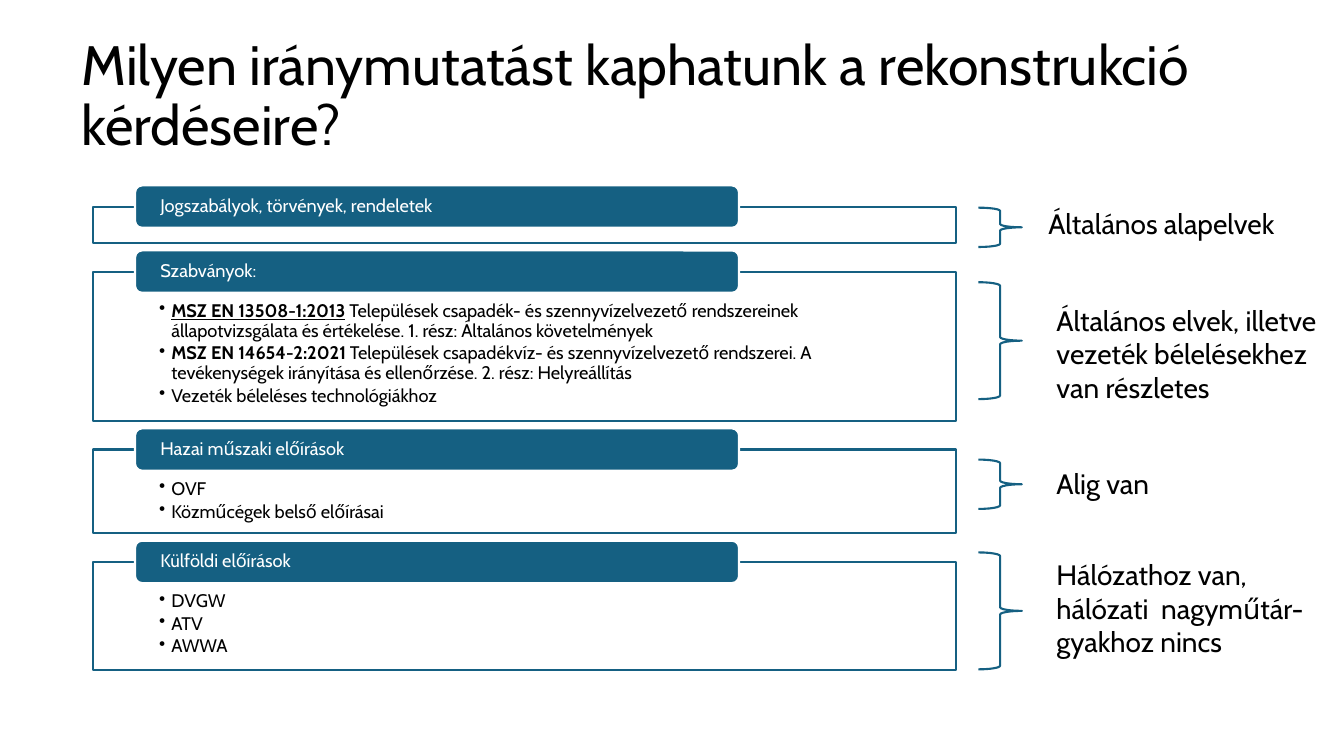
from dataclasses import dataclass

from lxml.etree import SubElement
from pptx import Presentation
from pptx.dml.color import RGBColor
from pptx.enum.shapes import MSO_SHAPE as Shape
from pptx.enum.text import MSO_ANCHOR as Anchor, PP_ALIGN as Align
from pptx.oxml.ns import qn
from pptx.util import Emu, Inches, Pt


@dataclass(frozen=True)
class Theme:
    font: str = "Cabin"
    accent: RGBColor = RGBColor(0x15, 0x60, 0x82)
    paper: RGBColor = RGBColor(0xFF, 0xFF, 0xFF)
    ink: RGBColor = RGBColor(0, 0, 0)
    title: float = 39.6
    body: float = 13
    note: float = 20
    line: float = 1.5


T = Theme()
W, H = Inches(13.33), Inches(7.5)

PANEL_X, PANEL_W = 6.9, 64.22
PANEL_TOP, PANEL_GAP = 27.33, 3.8
TAB_X, TAB_W, TAB_H = 10.05, 44.94, 5.6
TAB_RISE = TAB_H / 2
BRACE_X, BRACE_W = 72.8, 3.23
NOTE_X, NOTE_W = 77.87, 22.13
INDENT = 0.9

TITLE = "Milyen iránymutatást kaphatunk a rekonstrukció kérdéseire?"

PANELS = [
    ("Jogszabályok, törvények, rendeletek", 4.8, []),
    ("Szabványok:", 19.73, [
        [("MSZ EN 13508-1:2013", {"bold": True, "underline": True}),
         (" Települések csapadék- és szennyvízelvezető rendszereinek "
          "állapotvizsgálata és értékelése. 1. rész: Általános követelmények", {})],
        [("MSZ EN 14654-2:2021 ", {"bold": True}),
         ("Települések csapadékvíz- és szennyvízelvezető rendszerei. A "
          "tevékenységek irányítása és ellenőrzése. 2. rész: Helyreállítás", {})],
        "Vezeték béleléses technológiákhoz",
    ]),
    ("Hazai műszaki előírások", 11.07, ["OVF", "Közműcégek belső előírásai"]),
    ("Külföldi előírások", 14.27, ["DVGW", "ATV", "AWWA"]),
]

BRACES = [(27.47, 5.2), (37.33, 15.47), (60.8, 6.53), (73.07, 15.47)]

NOTES = [
    (77.27, 26.67, 5.87, "Általános alapelvek"),
    (NOTE_X, 39.47, 14.8, "Általános elvek, illetve vezeték bélelésekhez van részletes"),
    (NOTE_X, 61.07, 5.87, "Alig van"),
    (NOTE_X, 73.07, 14.8, "Hálózathoz van, hálózati  nagyműtár-gyakhoz nincs"),
]


def across(share):
    return Emu(round(W * share / 100))


def down(share):
    return Emu(round(H * share / 100))


def area(x, y, w, h):
    return across(x), down(y), across(w), down(h)


def add_bullet(p):
    pPr = p._p.get_or_add_pPr()
    pPr.set("marL", str(across(INDENT)))
    pPr.set("indent", str(-across(INDENT)))
    SubElement(pPr, qn("a:buChar")).set("char", "•")


def write(tf, text, size=T.body, color=T.ink, anchor=Anchor.TOP, spacing=None,
          after=None, bullet=False, insets=None):
    tf.word_wrap = True
    tf.vertical_anchor = anchor
    if insets:
        left, top, right, bottom = insets
        tf.margin_left, tf.margin_right = across(left), across(right)
        tf.margin_top, tf.margin_bottom = down(top), down(bottom)
    for i, item in enumerate([text] if isinstance(text, str) else text):
        p = tf.paragraphs[0] if i == 0 else tf.add_paragraph()
        if bullet:
            add_bullet(p)
        p.alignment = Align.LEFT
        if spacing:
            p.line_spacing = spacing
        if after:
            p.space_after = Pt(after)
        for words, style in [(item, {})] if isinstance(item, str) else item:
            r = p.add_run()
            r.text = words
            r.font.name, r.font.size = T.font, Pt(size)
            r.font.color.rgb = color
            r.font.bold = style.get("bold", False)
            r.font.underline = style.get("underline", False)


def add_text(s, box, text, **fmt):
    write(s.shapes.add_textbox(*area(*box)).text_frame, text, **fmt)


def add_outline(s, kind, box, fill=None, line=T.accent):
    sp = s.shapes.add_shape(kind, *area(*box))
    sp.shadow.inherit = False
    if fill is None:
        sp.fill.background()
    else:
        sp.fill.solid()
        sp.fill.fore_color.rgb = fill
    sp.line.color.rgb = line
    sp.line.width = Pt(T.line)
    return sp


def add_panel(s, top, height, heading, items):
    sp = add_outline(s, Shape.RECTANGLE, (PANEL_X, top, PANEL_W, height), T.paper)
    color = sp.fill._xPr.find(qn("a:solidFill"))[0]
    SubElement(color, qn("a:alpha")).set("val", "90000")
    if items:
        write(sp.text_frame, items, spacing=0.9, after=2, bullet=True,
              insets=(4.95, 4, 4.95, 1.33))
    tab = add_outline(s, Shape.ROUNDED_RECTANGLE,
                      (TAB_X, top - TAB_RISE, TAB_W, TAB_H), T.accent, T.paper)
    write(tab.text_frame, heading, color=T.paper, anchor=Anchor.MIDDLE,
          spacing=0.9, insets=(1.73, 0, 1.73, 0))


def main():
    prs = Presentation()
    prs.slide_width, prs.slide_height = W, H
    s = prs.slides.add_slide(prs.slide_layouts[6])
    add_text(s, (5.33, 5.33, 91.22, 15.2), TITLE, size=T.title,
             anchor=Anchor.MIDDLE, spacing=0.9)
    top = PANEL_TOP
    for heading, height, items in PANELS:
        add_panel(s, top, height, heading, items)
        top += height + PANEL_GAP
    for y, h in BRACES:
        add_outline(s, Shape.RIGHT_BRACE, (BRACE_X, y, BRACE_W, h))
    for x, y, h, text in NOTES:
        add_text(s, (x, y, NOTE_W, h), text, size=T.note)
    prs.save("out.pptx")


if __name__ == "__main__":
    main()
